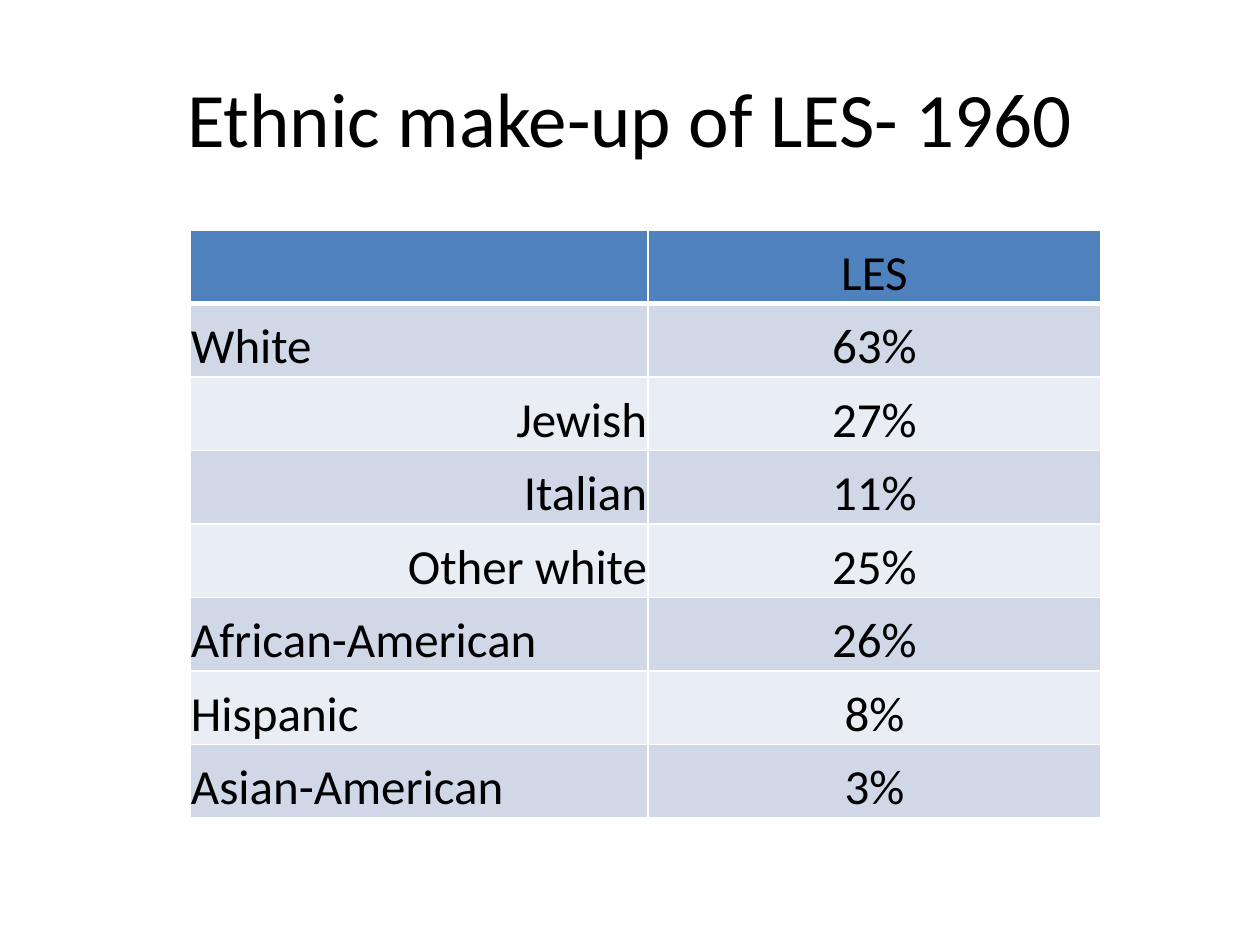
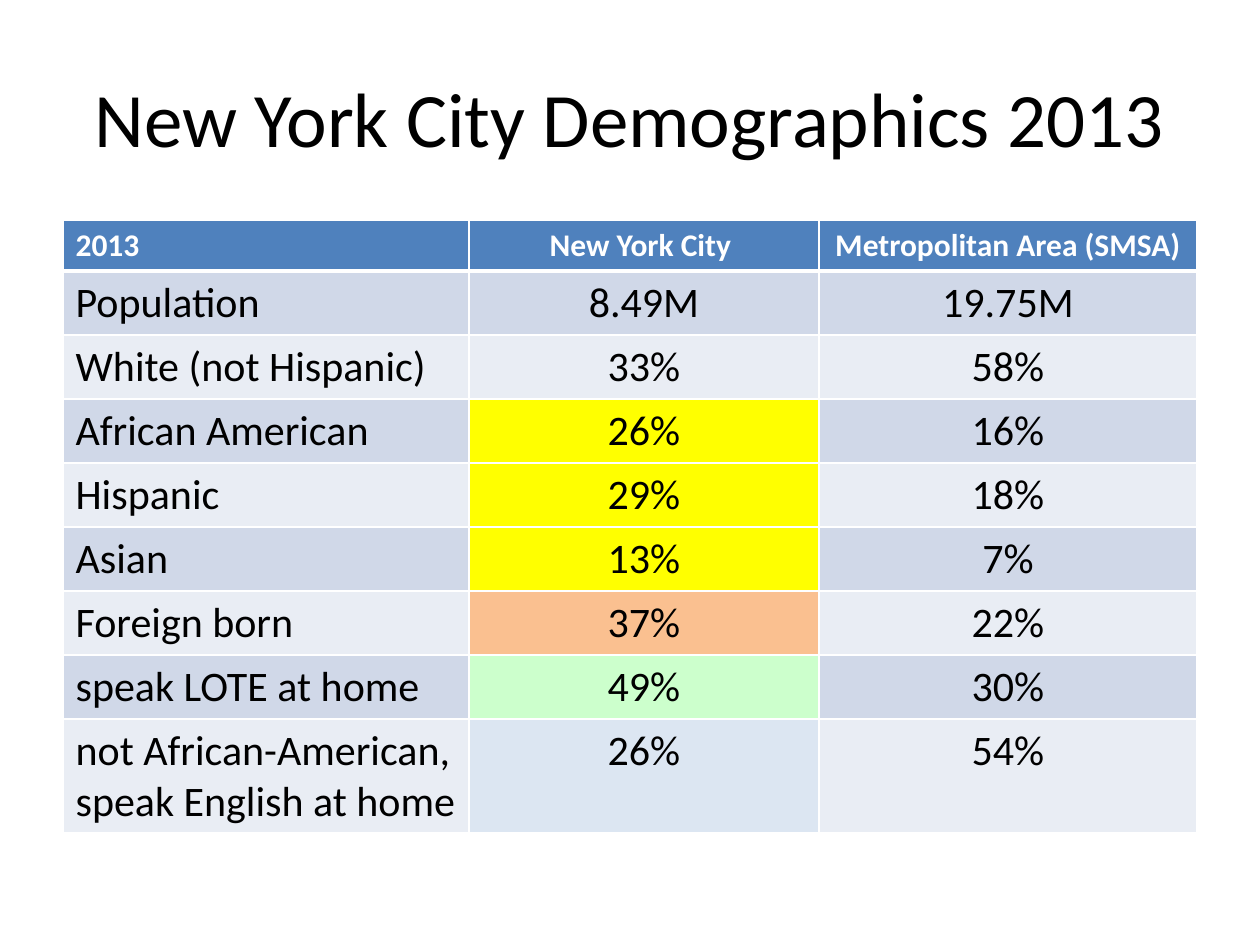
import lxml.etree
import pptx
import pptx.dml.color
import pptx.enum.text
import pptx.oxml.ns
import pptx.util

RGB = pptx.dml.color.RGBColor
ALIGN = pptx.enum.text.PP_ALIGN
ANCHOR = pptx.enum.text.MSO_ANCHOR

PX_PER_INCH = 126
FONT = "Calibri"
BLACK = RGB(0x00, 0x00, 0x00)
WHITE = RGB(0xFF, 0xFF, 0xFF)
HEADER_BLUE = RGB(0x4F, 0x81, 0xBD)
BANDS = (RGB(0xD0, 0xD8, 0xE8), RGB(0xE9, 0xED, 0xF4))
YELLOW = RGB(0xFF, 0xFF, 0x00)
ORANGE = RGB(0xFA, 0xC0, 0x90)
GREEN = RGB(0xCC, 0xFF, 0xCC)
PALE_BLUE = RGB(0xDC, 0xE6, 0xF2)

TITLE_BOX = (63, 38, 1134, 157)

LES_ROWS = [
    ("", "LES"),
    ("White", "63%"),
    ("Jewish", "27%"),
    ("Italian", "11%"),
    ("Other white", "25%"),
    ("African-American", "26%"),
    ("Hispanic", "8%"),
    ("Asian-American", "3%"),
]
WHITE_SUBGROUPS = ("Jewish", "Italian", "Other white")

CITY_ROWS = [
    ("2013", "New York City ", "Metropolitan Area (SMSA)"),
    ("Population", "8.49M", "19.75M"),
    ("White (not Hispanic)", "33%", "58%"),
    ("African American", "26%", "16%"),
    ("Hispanic", "29%", "18%"),
    ("Asian", "13%", "7%"),
    ("Foreign born", "37%", "22%"),
    ("speak LOTE at home", "49%", "30%"),
    ("not African-American, speak English at home", "26%", "54%"),
]
CITY_HIGHLIGHTS = {3: YELLOW, 4: YELLOW, 5: YELLOW, 6: ORANGE, 7: GREEN, 8: PALE_BLUE}


def px(length):
    """Turn px into EMU."""
    return pptx.util.Emu(round(length * 914400 / PX_PER_INCH))


def style_paragraph(paragraph, size, color, align, bold=False):
    """Align a paragraph and format its runs."""
    paragraph.alignment = align
    for run in paragraph.runs:
        run.font.name = FONT
        run.font.size = pptx.util.Pt(size)
        run.font.bold = bold
        run.font.color.rgb = color


def add_title(slide, box, wording):
    """Add the centred slide title."""
    title = slide.shapes.add_textbox(*map(px, box)).text_frame
    title.word_wrap = True
    title.vertical_anchor = ANCHOR.MIDDLE
    title.text = wording
    style_paragraph(title.paragraphs[0], 44, BLACK, ALIGN.CENTER)


def add_borders(cell, **widths):
    """Draw white borders of the given point widths on a cell."""
    properties = cell._tc.get_or_add_tcPr()
    for side in ("L", "R", "T", "B"):
        line = lxml.etree.SubElement(
            properties, pptx.oxml.ns.qn(f"a:ln{side}"), w=str(pptx.util.Pt(widths.get(side, 1)))
        )
        fill = lxml.etree.SubElement(line, pptx.oxml.ns.qn("a:solidFill"))
        lxml.etree.SubElement(fill, pptx.oxml.ns.qn("a:srgbClr"), val=str(WHITE))


def add_banded_table(slide, left, top, widths, heights, rows):
    """Add a table with a blue header and alternating bands, and return it."""
    table = slide.shapes.add_table(
        len(rows), len(widths), px(left), px(top), px(sum(widths)), px(sum(heights))
    ).table
    for column, width in zip(table.columns, widths):
        column.width = px(width)
    for r, (values, height) in enumerate(zip(rows, heights)):
        table.rows[r].height = px(height)
        for c, value in enumerate(values):
            cell = table.cell(r, c)
            cell.text = value
            add_borders(cell, B=3 if r == 0 else 1, T=3 if r == 1 else 1)
            cell.fill.solid()
            cell.fill.fore_color.rgb = BANDS[(r - 1) % 2] if r else HEADER_BLUE
    return table


def build_les_slide(slide):
    """Show the ethnic make-up of the LES in 1960."""
    add_title(slide, TITLE_BOX, "Ethnic make-up of LES- 1960")
    heights = [588 / len(LES_ROWS)] * len(LES_ROWS)
    table = add_banded_table(slide, 190, 230, (458, 453), heights, LES_ROWS)
    for cell in table.iter_cells():
        cell.vertical_anchor = ANCHOR.BOTTOM
        cell.margin_left = cell.margin_right = cell.margin_top = px(1)
        cell.margin_bottom = 0
    for group, share in (row.cells for row in table.rows):
        align = ALIGN.RIGHT if group.text in WHITE_SUBGROUPS else ALIGN.LEFT
        style_paragraph(group.text_frame.paragraphs[0], 28, BLACK, align)
        style_paragraph(share.text_frame.paragraphs[0], 28, BLACK, ALIGN.CENTER)


def build_city_slide(slide):
    """Compare the city with its metropolitan area in 2013."""
    add_title(slide, TITLE_BOX, "New York City Demographics 2013")
    heights = [51] + [64] * 7 + [114]
    table = add_banded_table(slide, 63, 220, (406, 350, 378), heights, CITY_ROWS)
    for r, row in enumerate(table.rows):
        size, color = (24, BLACK) if r else (18, WHITE)
        for c, cell in enumerate(row.cells):
            align = ALIGN.CENTER if c else ALIGN.LEFT
            style_paragraph(cell.text_frame.paragraphs[0], size, color, align, bold=r == 0)
    for r, highlight in CITY_HIGHLIGHTS.items():
        table.cell(r, 1).fill.fore_color.rgb = highlight


def main():
    """Build and save both slides."""
    deck = pptx.Presentation()
    deck.slide_width, deck.slide_height = px(1260), px(945)
    for build in (build_les_slide, build_city_slide):
        build(deck.slides.add_slide(deck.slide_layouts[6]))
    deck.save("out.pptx")


if __name__ == "__main__":
    main()
